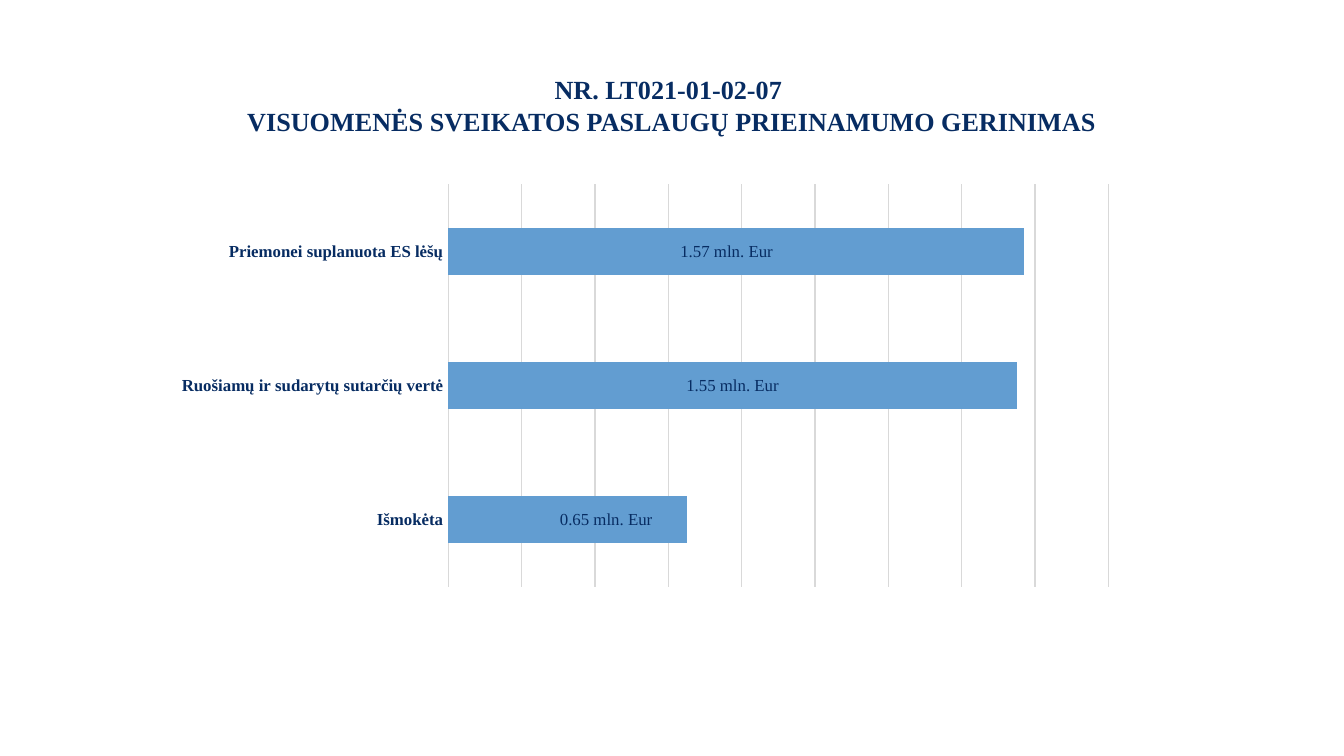
import lxml.etree
import pptx
import pptx.chart.data
import pptx.dml.color
import pptx.enum.chart
import pptx.enum.text
import pptx.oxml
import pptx.oxml.ns
import pptx.util
from pptx.util import Cm

NAVY = "072C62"
BLUE = "629DD1"
GREY = "D9D9D9"
SERIF = "Times New Roman"

TITLE_LINES = [
    "NR. LT021-01-02-07 ",
    "VISUOMENĖS SVEIKATOS PASLAUGŲ PRIEINAMUMO GERINIMAS",
]
FUNDS = [
    ("Išmokėta", 0.65, 0.04),
    ("Ruošiamų ir sudarytų sutarčių vertė", 1.55, 0),
    ("Priemonei suplanuota ES lėšų", 1.57, -0.01),
]


def color(hex_string):
    return pptx.dml.color.RGBColor.from_string(hex_string)


def style_font(font, size, hex_string=NAVY, bold=False, name=SERIF):
    font.name = name
    font.size = pptx.util.Pt(size)
    font.bold = bold
    font.color.rgb = color(hex_string)


def style_line(line):
    line.color.rgb = color(GREY)
    line.width = pptx.util.Pt(0.75)


def add_title(slide):
    title = slide.shapes.add_textbox(Cm(3.07), Cm(1.27), Cm(19.25), Cm(1.45))
    frame = title.text_frame
    frame.word_wrap = True
    frame.text = "\n".join(TITLE_LINES)
    for paragraph in frame.paragraphs:
        paragraph.alignment = pptx.enum.text.PP_ALIGN.CENTER
        for run in paragraph.runs:
            style_font(run.font, 14, bold=True)


def shift_label(series, index, offset):
    label = series.data_labels._element.xpath(f"c:dLbl[c:idx/@val='{index}']")[0]
    namespace = pptx.oxml.ns.nsdecls("c")
    layout = pptx.oxml.parse_xml(
        f'<c:layout {namespace}><c:manualLayout><c:x val="{offset}"/>'
        '<c:y val="0"/></c:manualLayout></c:layout>'
    )
    label.find(pptx.oxml.ns.qn("c:idx")).addnext(layout)


def label_bars(series):
    labels = series.data_labels
    labels.show_value = True
    style_font(labels.font, 9)
    for index, (_, amount, offset) in enumerate(FUNDS):
        label = series.points[index].data_label
        label.text_frame.text = f"{amount:.2f} mln. Eur"
        style_font(label.text_frame.paragraphs[0].runs[0].font, 9)
        label.position = pptx.enum.chart.XL_LABEL_POSITION.CENTER
        if offset:
            shift_label(series, index, offset)


def style_axes(chart):
    categories = chart.category_axis
    categories.major_tick_mark = pptx.enum.chart.XL_TICK_MARK.NONE
    style_font(categories.tick_labels.font, 9, bold=True)
    style_line(categories.format.line)

    amounts = chart.value_axis
    amounts.minimum_scale = 0
    amounts.maximum_scale = 1.8
    amounts.major_unit = 0.2
    amounts.has_major_gridlines = True
    style_line(amounts.major_gridlines.format.line)
    amounts.visible = False


def add_funds_chart(slide):
    funds = pptx.chart.data.CategoryChartData()
    funds.categories = [name for name, _, _ in FUNDS]
    funds.add_series("Series 1", [amount for _, amount, _ in FUNDS])
    chart = slide.shapes.add_chart(
        pptx.enum.chart.XL_CHART_TYPE.BAR_CLUSTERED,
        Cm(3.07), Cm(3.33), Cm(18.24), Cm(7.92), funds,
    ).chart
    chart.has_legend = False
    chart.has_title = False
    style_font(chart.font, 10, "000000", name="League Spartan")
    style_axes(chart)

    plot = chart.plots[0]
    plot.gap_width = 182
    plot.vary_by_categories = False
    bars = plot.series[0]
    bars.format.fill.solid()
    bars.format.fill.fore_color.rgb = color(BLUE)
    label_bars(bars)


def main():
    deck = pptx.Presentation()
    deck.slide_width = Cm(25.4)
    deck.slide_height = Cm(14.29)
    slide = deck.slides.add_slide(deck.slide_layouts[6])
    add_title(slide)
    add_funds_chart(slide)
    deck.save("out.pptx")


if __name__ == "__main__":
    main()
